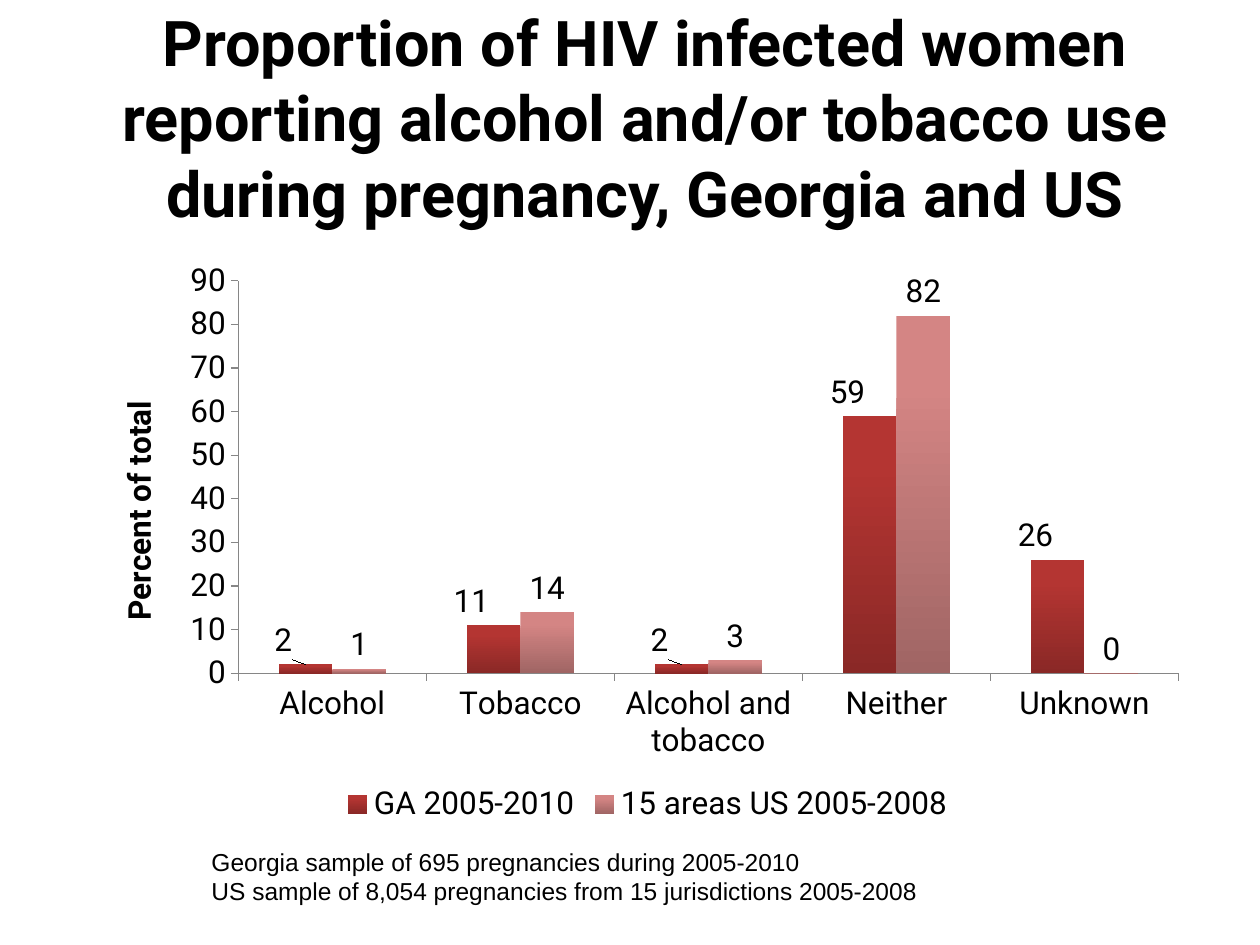
from dataclasses import dataclass

import pptx
import pptx.chart.data
import pptx.dml.color
import pptx.enum.chart
import pptx.enum.text
import pptx.oxml
import pptx.oxml.ns
import pptx.util

Inches = pptx.util.Inches
Pt = pptx.util.Pt
RGBColor = pptx.dml.color.RGBColor
PP_ALIGN = pptx.enum.text.PP_ALIGN
MSO_ANCHOR = pptx.enum.text.MSO_ANCHOR
XL = pptx.enum.chart

BLACK = RGBColor(0x00, 0x00, 0x00)
AXIS_GREY = RGBColor(0x86, 0x86, 0x86)
RED = RGBColor(0xB4, 0x35, 0x32)
DARK_RED = RGBColor(0x8A, 0x28, 0x26)
PINK = RGBColor(0xD4, 0x85, 0x84)
DARK_PINK = RGBColor(0xA0, 0x65, 0x64)


@dataclass
class TextBlock:
    text: str
    box: tuple[float, float, float, float]
    font: str
    size: int
    bold: bool = False
    alignment: PP_ALIGN = PP_ALIGN.LEFT
    anchor: MSO_ANCHOR = MSO_ANCHOR.TOP


@dataclass
class Group:
    name: str
    values: tuple[int, ...]
    top_color: RGBColor
    bottom_color: RGBColor
    label_shift: float = 0


TEXT_BLOCKS = [
    TextBlock(
        "Proportion of HIV infected women reporting alcohol and/or tobacco use "
        "during pregnancy, Georgia and US",
        (0.58, 0.3, 9.08, 1.25), "Roboto", 36, True,
        PP_ALIGN.CENTER, MSO_ANCHOR.MIDDLE,
    ),
    TextBlock(
        "Georgia sample of 695 pregnancies during 2005-2010\n"
        "US sample of 8,054 pregnancies from 15 jurisdictions 2005-2008",
        (1.58, 6.67, 7.91, 0.57), "Arial", 14,
    ),
]
CATEGORIES = ["Alcohol", "Tobacco", "Alcohol and tobacco", "Neither", "Unknown"]
GROUPS = [
    Group("GA 2005-2010", (2, 11, 2, 59, 26), RED, DARK_RED, -0.02),
    Group("15 areas US 2005-2008", (1, 14, 3, 82, 0), PINK, DARK_PINK),
]


def style_font(font, name: str, size: int, bold: bool = False) -> None:
    """Apply a black typeface of the given size."""
    font.name, font.size, font.bold = name, Pt(size), bold
    font.color.rgb = BLACK


def add_text(slide, block: TextBlock) -> None:
    """Add one wrapped text box."""
    shape = slide.shapes.add_textbox(*map(Inches, block.box))
    frame = shape.text_frame
    frame.word_wrap = True
    frame.vertical_anchor = block.anchor
    frame.text = block.text
    for paragraph in frame.paragraphs:
        paragraph.alignment = block.alignment
        for run in paragraph.runs:
            style_font(run.font, block.font, block.size, block.bold)


def make_layout(**settings):
    """Build a manual chart layout element."""
    children = "".join(f'<c:{tag} val="{value}"/>' for tag, value in settings.items())
    return pptx.oxml.parse_xml(
        f'<c:layout {pptx.oxml.ns.nsdecls("c")}>'
        f"<c:manualLayout>{children}</c:manualLayout></c:layout>"
    )


def style_series(series, group: Group) -> None:
    """Shade the columns and place their value labels."""
    fill = series.format.fill
    fill.gradient()
    fill.gradient_angle = 270
    for stop, color, position in zip(
        fill.gradient_stops, (group.top_color, group.bottom_color), (0.2, 1)
    ):
        stop.color.rgb, stop.position = color, position
    labels = series.data_labels
    labels.show_value = True
    labels.number_format, labels.number_format_is_linked = "0", False
    labels.position = XL.XL_LABEL_POSITION.OUTSIDE_END
    style_font(labels.font, "Roboto", 18)
    if group.label_shift:
        for index in range(len(group.values)):
            label = series.points[index].data_label
            label.position = XL.XL_LABEL_POSITION.OUTSIDE_END
            style_font(label.font, "Roboto", 18)
        for index_element in labels._element.xpath("c:dLbl/c:idx"):
            index_element.addnext(make_layout(x=group.label_shift, y=0))


def add_column_chart(slide) -> None:
    """Add the clustered column chart."""
    data = pptx.chart.data.CategoryChartData(number_format="0")
    data.categories = CATEGORIES
    for group in GROUPS:
        data.add_series(group.name, group.values)
    chart = slide.shapes.add_chart(
        XL.XL_CHART_TYPE.COLUMN_CLUSTERED,
        *map(Inches, (0.75, 2, 8.78, 4.58)), data,
    ).chart
    chart.has_title = False
    style_font(chart.font, "Roboto", 18)
    chart.has_legend = True
    chart.legend.position = XL.XL_LEGEND_POSITION.BOTTOM
    chart.legend.include_in_layout = False

    for axis in (chart.category_axis, chart.value_axis):
        axis.has_major_gridlines = False
        axis.major_tick_mark = XL.XL_TICK_MARK.OUTSIDE
        axis.format.line.color.rgb = AXIS_GREY
        axis.format.line.width = Pt(0.75)
    value_axis = chart.value_axis
    value_axis.minimum_scale, value_axis.maximum_scale = 0, 90
    value_axis.major_unit = 10
    title_frame = value_axis.axis_title.text_frame
    title_frame.text = "Percent of total"
    style_font(title_frame.paragraphs[0].runs[0].font, "Roboto", 18, True)

    plot = chart.plots[0]
    plot.gap_width, plot.overlap, plot.vary_by_categories = 150, 0, False
    for series, group in zip(plot.series, GROUPS):
        style_series(series, group)

    plot_area = chart._chartSpace.chart.plotArea
    for layout in plot_area.xpath("c:layout"):
        plot_area.remove(layout)
    plot_area.insert(0, make_layout(
        layoutTarget="inner", xMode="edge", yMode="edge",
        x=0.13, y=0.05, w=0.85, h=0.68,
    ))


def main() -> None:
    """Build and save the slide."""
    presentation = pptx.Presentation()
    presentation.slide_width, presentation.slide_height = Inches(10), Inches(7.5)
    slide = presentation.slides.add_slide(presentation.slide_layouts[6])
    add_column_chart(slide)
    for block in TEXT_BLOCKS:
        add_text(slide, block)
    presentation.save("out.pptx")


if __name__ == "__main__":
    main()
